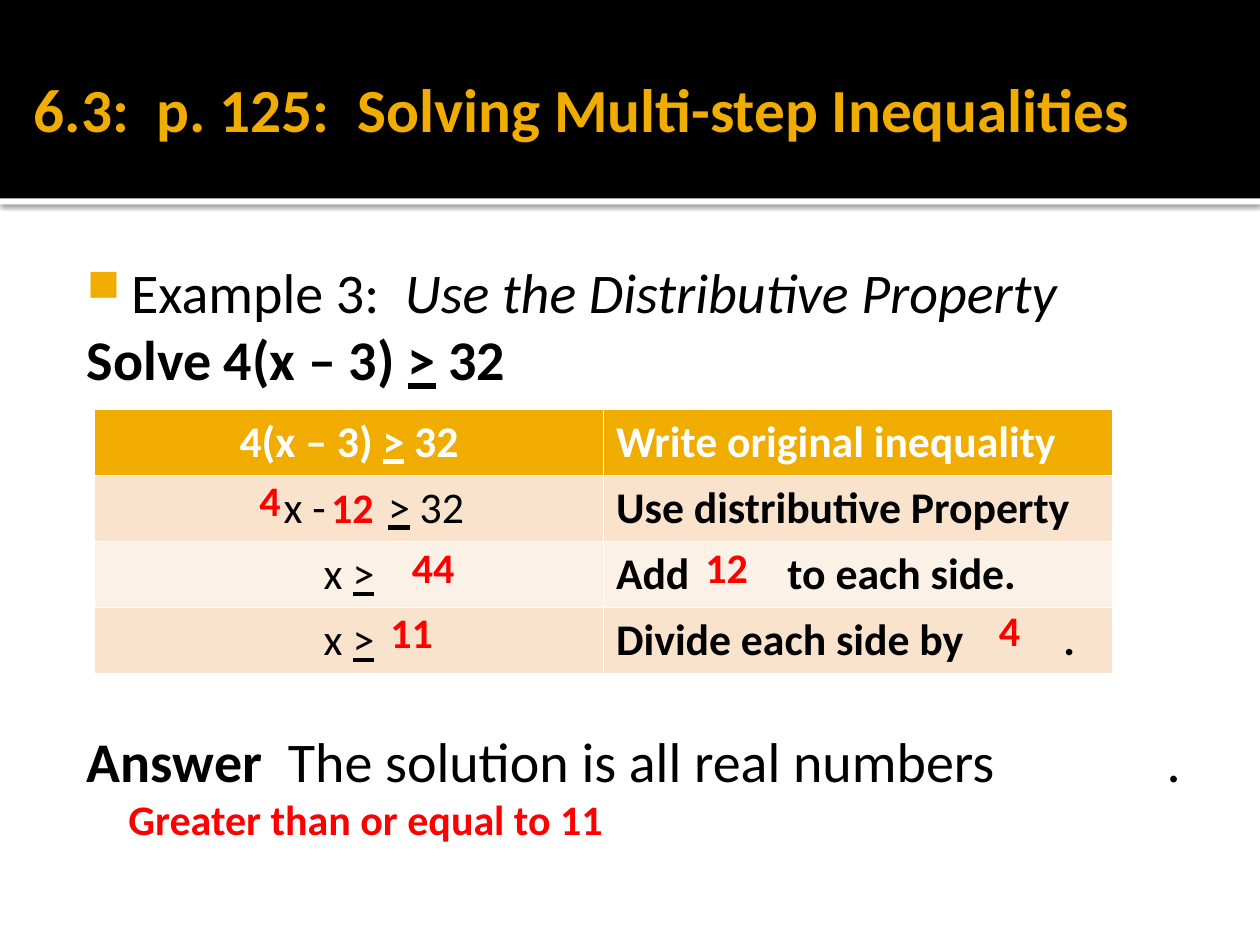
from dataclasses import dataclass

from lxml import etree
from pptx import Presentation
from pptx.dml.color import RGBColor
from pptx.enum.shapes import MSO_SHAPE
from pptx.enum.text import MSO_ANCHOR, PP_ALIGN
from pptx.oxml import parse_xml
from pptx.oxml.ns import qn
from pptx.util import Inches, Pt

RECT = MSO_SHAPE.RECTANGLE
MIDDLE = MSO_ANCHOR.MIDDLE
LEFT, CENTER = PP_ALIGN.LEFT, PP_ALIGN.CENTER
SPACE = "http://schemas.openxmlformats.org/drawingml/2006/main"


@dataclass(frozen=True)
class Theme:
    """Colours, type sizes and font of the slide."""
    font: str = "Calibri"
    gold: str = "F0AD00"
    black: str = "000000"
    white: str = "FFFFFF"
    red: str = "FF0000"
    bands: tuple = ("F9E3CC", "FCF1E7")
    title: int = 35
    body: int = 32
    cell: int = 25
    answer: int = 24


THEME = Theme()


@dataclass(frozen=True)
class Box:
    """A region in inches, with inner boxes given as shares of it."""
    left: float
    top: float
    width: float
    height: float

    def share(self, x, y, w, h):
        """Return the box at the given shares of this one."""
        return Box(self.left + x * self.width, self.top + y * self.height,
                   w * self.width, h * self.height)

    def place(self):
        """Return the four lengths for a shape."""
        return [Inches(v) for v in (self.left, self.top, self.width, self.height)]


def write(para, runs, size, color):
    """Add runs of (text, marks), where marks holds any of b, i and u."""
    for text, marks in runs:
        run = para.add_run()
        run.text = text
        font = run.font
        font.name, font.size = THEME.font, Pt(size)
        font.color.rgb = RGBColor.from_string(color)
        font.bold, font.italic, font.underline = (m in marks for m in "biu")


def set_tab(para, pos):
    """Give a paragraph one left tab stop."""
    stops = etree.SubElement(para._p.get_or_add_pPr(), qn("a:tabLst"))
    etree.SubElement(stops, qn("a:tab"), pos=str(Inches(pos)), algn="l")


def set_bullet(para, indent):
    """Give a paragraph a hanging gold square."""
    props = para._p.get_or_add_pPr()
    props.set("marL", str(Inches(indent)))
    props.set("indent", str(-Inches(indent)))
    color = etree.SubElement(props, qn("a:buClr"))
    etree.SubElement(color, qn("a:srgbClr"), val=THEME.gold)
    etree.SubElement(props, qn("a:buSzPct"), val="80000")
    etree.SubElement(props, qn("a:buChar"), char="■")


def add_text(slide, box, inset=0.1):
    """Add a wrapping text box and return its frame."""
    frame = slide.shapes.add_textbox(*box.place()).text_frame
    frame.word_wrap = True
    frame.margin_left = Inches(inset)
    return frame


def add_bar(slide, box, color):
    """Add a plain filled bar."""
    bar = slide.shapes.add_shape(RECT, *box.place())
    bar.shadow.inherit = False
    bar.fill.solid()
    bar.fill.fore_color.rgb = RGBColor.from_string(color)
    bar.line.fill.background()
    return bar


def add_head(slide, box):
    """Place the black title band and its shaded white rule."""
    rule = add_bar(slide, box.share(0, 1, 1, 0.03), THEME.white)
    shade = parse_xml(
        f'<a:outerShdw xmlns:a="{SPACE}" blurRad="{Pt(2.5)}" dist="{Pt(0.8)}" '
        'dir="5400000" rotWithShape="0"><a:srgbClr val="000000">'
        '<a:alpha val="60000"/></a:srgbClr></a:outerShdw>')
    rule._element.spPr.find(qn("a:effectLst")).append(shade)
    add_bar(slide, box, THEME.black)
    frame = add_text(slide, box.share(0.017, 0.11, 0.958, 0.87))
    frame.vertical_anchor = MIDDLE
    write(frame.paragraphs[0],
          [("6.3:  p. 125:  Solving Multi-step Inequalities", "b")],
          THEME.title, THEME.gold)


def add_body(slide, box):
    """Place the example, the problem and the answer line."""
    frame = add_text(slide, box, 0.19)
    frame.margin_top = Inches(0.1)
    lines = [
        [("Example 3:  ", ""), ("Use the Distributive Property", "i")],
        [("Solve 4(x – 3) ", "b"), (">", "bu"), (" 32", "b")],
        [("Answer", "b"), ("  The solution is all real numbers\t.", "")],
    ]
    paras = [frame.paragraphs[0]] + [frame.add_paragraph() for _ in lines[1:]]
    for para, runs in zip(paras, lines):
        write(para, runs, THEME.body, THEME.black)
    paras[-1].space_before = Pt(191)
    set_bullet(paras[0], 0.35)
    set_tab(paras[-1], 8.57)


def add_steps(slide, box):
    """Place the table of steps: runs, alignment, inset and tab per cell."""
    rows = [
        (([("4(x – 3) ", "b"), (">", "bu"), (" 32", "b")], CENTER, 0.1, None),
         ([("Write original inequality", "b")], LEFT, 0.1, None)),
        (([("x -\t", ""), (">", "u"), (" 32", "")], LEFT, 1.5, 0.83),
         ([("Use distributive Property", "b")], LEFT, 0.1, None)),
        (([("x ", ""), (">", "u")], CENTER, 0.1, None),
         ([("Add\tto each side.", "b")], LEFT, 0.1, 1.36)),
        (([("x ", ""), (">", "u")], CENTER, 0.1, None),
         ([("Divide each side by\t.", "b")], LEFT, 0.1, 3.55)),
    ]
    table = slide.shapes.add_table(len(rows), 2, *box.place()).table
    for r, row in enumerate(rows):
        fill = THEME.bands[(r - 1) % 2] if r else THEME.gold
        ink = THEME.black if r else THEME.white
        for c, (runs, align, inset, tab) in enumerate(row):
            cell = table.cell(r, c)
            cell.fill.solid()
            cell.fill.fore_color.rgb = RGBColor.from_string(fill)
            cell.margin_left = Inches(inset)
            para = cell.text_frame.paragraphs[0]
            para.alignment = align
            write(para, runs, THEME.cell, ink)
            if tab:
                set_tab(para, tab)


def add_keys(slide, box):
    """Place the red answers over the gaps, as shares of the slide."""
    keys = [
        ("4", 0.196, 0.496, 0.092), ("12", 0.253, 0.503, 0.092),
        ("12", 0.55, 0.567, 0.092), ("44", 0.317, 0.567, 0.092),
        ("4", 0.783, 0.633, 0.092), ("11", 0.3, 0.635, 0.092),
        ("Greater than or equal to 11", 0.092, 0.833, 0.708),
    ]
    for text, x, y, w in keys:
        frame = add_text(slide, box.share(x, y, w, 0.067))
        write(frame.paragraphs[0], [(text, "b")], THEME.answer, THEME.red)


def main():
    """Build and save the slide."""
    deck = Presentation()
    page = Box(0, 0, 10, 7.5)
    deck.slide_width, deck.slide_height = page.place()[2:]
    slide = deck.slides.add_slide(deck.slide_layouts[6])
    add_head(slide, page.share(0, 0, 1, 0.21))
    add_body(slide, page.share(0.05, 0.259, 0.9, 0.675))
    add_steps(slide, page.share(0.075, 0.433, 0.808, 0.28))
    add_keys(slide, page)
    deck.save("out.pptx")


if __name__ == "__main__":
    main()
